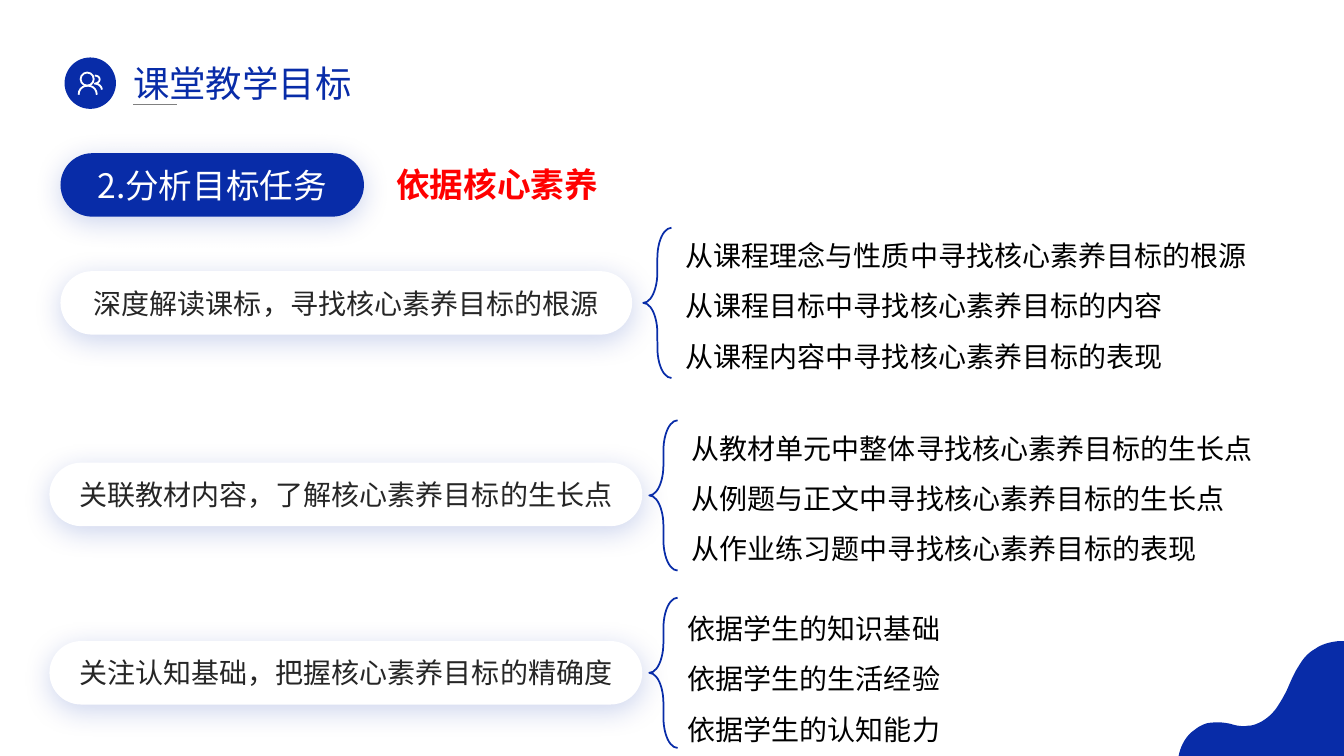
from dataclasses import dataclass

from lxml import etree
from pptx import Presentation
from pptx.dml.color import RGBColor
from pptx.enum.shapes import MSO_CONNECTOR, MSO_SHAPE
from pptx.enum.text import MSO_ANCHOR, MSO_AUTO_SIZE, PP_ALIGN
from pptx.oxml.ns import qn
from pptx.util import Inches, Pt

LEFT, CENTER = PP_ALIGN.LEFT, PP_ALIGN.CENTER
TOP, MIDDLE = MSO_ANCHOR.TOP, MSO_ANCHOR.MIDDLE
GROW = MSO_AUTO_SIZE.SHAPE_TO_FIT_TEXT
FIXED = MSO_AUTO_SIZE.NONE
OVAL, PILL, BRACE = MSO_SHAPE.OVAL, MSO_SHAPE.ROUNDED_RECTANGLE, MSO_SHAPE.LEFT_BRACE
STRAIGHT = MSO_CONNECTOR.STRAIGHT
COMPARISON_LAYOUT = 4


@dataclass(frozen=True)
class Theme:
    font: str = "Noto Sans CJK SC"
    blue: str = "082CA8"
    white: str = "FFFFFF"
    red: str = "FF0000"
    ink: str = "262626"
    black: str = "000000"
    gray: str = "808080"
    title: int = 26
    heading: int = 24
    body: int = 20


THEME = Theme()


def write_text(shape, lines, *, size, color, bold=False, align=LEFT, anchor=TOP,
               spacing=1.0, wrap=True, fit=GROW, side=0.1):
    """Fill a shape with unbulleted paragraphs in one format."""
    frame = shape.text_frame
    frame.word_wrap, frame.auto_size, frame.vertical_anchor = wrap, fit, anchor
    frame.margin_left = frame.margin_right = Inches(side)
    frame.margin_top = frame.margin_bottom = Inches(0.05)
    for index, line in enumerate(lines):
        paragraph = frame.add_paragraph() if index else frame.paragraphs[0]
        paragraph.alignment, paragraph.line_spacing = align, spacing
        paragraph.space_before = Pt(0)
        properties = paragraph._p.get_or_add_pPr()
        properties.set("marL", "0")
        properties.set("indent", "0")
        etree.SubElement(properties, qn("a:buNone"))
        run = paragraph.add_run()
        run.text = line
        run.font.size, run.font.bold = Pt(size), bold
        run.font.color.rgb = RGBColor.from_string(color)
        run.font.name = THEME.font
        etree.SubElement(run._r.get_or_add_rPr(), qn("a:ea"), typeface=THEME.font)


def trace(start, curves, steps=10):
    """Points along a chain of cubic curves, each (x1, y1, x2, y2, x, y)."""
    points = [start]
    for x1, y1, x2, y2, x3, y3 in curves:
        x0, y0 = points[-1]
        for step in range(1, steps + 1):
            t = step / steps
            a, b, c, d = (1 - t) ** 3, 3 * t * (1 - t) ** 2, 3 * t * t * (1 - t), t ** 3
            points.append((a * x0 + b * x1 + c * x2 + d * x3,
                           a * y0 + b * y1 + c * y2 + d * y3))
    return points


class SlideBuilder:
    def __init__(self, slide, theme):
        self.slide, self.theme = slide, theme

    def paint(self, shape, fill=None, line=None, weight=1.0):
        shape.shadow.inherit = False
        if fill:
            shape.fill.solid()
            shape.fill.fore_color.rgb = RGBColor.from_string(fill)
        else:
            shape.fill.background()
        if line:
            shape.line.color.rgb = RGBColor.from_string(line)
            shape.line.width = Pt(weight)
        else:
            shape.line.fill.background()
        return shape

    def shape(self, kind, left, top, width, height, **paint):
        shape = self.slide.shapes.add_shape(
            kind, Inches(left), Inches(top), Inches(width), Inches(height))
        return self.paint(shape, **paint)

    def outline(self, points, close=False, **paint):
        points = [(Inches(x), Inches(y)) for x, y in points]
        builder = self.slide.shapes.build_freeform(*points[0])
        builder.add_line_segments(points[1:], close=close)
        return self.paint(builder.convert_to_shape(), **paint)

    def rule(self, x1, x2, y):
        line = self.slide.shapes.add_connector(
            STRAIGHT, Inches(x1), Inches(y), Inches(x2), Inches(y))
        line.line.color.rgb = RGBColor.from_string(self.theme.gray)
        line.line.width = Pt(0.5)
        etree.SubElement(line._element.spPr, qn("a:effectLst"))

    def pill(self, text, left, top, width, fill, color, size):
        pill = self.shape(PILL, left, top, width, 0.63, fill=fill)
        pill.adjustments[0] = 0.5
        effects = pill._element.spPr.find(qn("a:effectLst"))
        shadow = etree.SubElement(effects, qn("a:outerShdw"), blurRad=str(Pt(20)),
                                  dist=str(Pt(4)), dir="5400000", algn="t", rotWithShape="0")
        tint = etree.SubElement(shadow, qn("a:srgbClr"), val=self.theme.blue)
        etree.SubElement(tint, qn("a:alpha"), val="20000")
        write_text(pill, [text], size=size, color=color, align=CENTER,
                   anchor=MIDDLE, fit=FIXED, side=0.2)

    def brace(self, left, top):
        brace = self.shape(BRACE, left, top, 0.28, 1.49, line=self.theme.blue, weight=1.25)
        brace.adjustments[0] = 1.08

    def placeholder(self, index, lines, left, top, width, height, **text_format):
        holder = self.slide.placeholders[index]
        holder.left, holder.top = Inches(left), Inches(top)
        holder.width, holder.height = Inches(width), Inches(height)
        write_text(holder, lines, **text_format)


def main():
    deck = Presentation()
    deck.slide_width, deck.slide_height = Inches(13.33), Inches(7.5)
    slide = deck.slides.add_slide(deck.slide_layouts[COMPARISON_LAYOUT])
    page = SlideBuilder(slide, THEME)

    # Corner wave
    wave = trace((13.28, 6.36), [
        (13.19, 6.37, 13.11, 6.39, 13.04, 6.44),
        (12.97, 6.48, 12.92, 6.54, 12.88, 6.61),
        (12.84, 6.67, 12.81, 6.74, 12.78, 6.81),
        (12.75, 6.88, 12.71, 6.95, 12.67, 7.01),
        (12.63, 7.07, 12.58, 7.12, 12.51, 7.16),
        (12.47, 7.18, 12.43, 7.2, 12.38, 7.2),
        (12.32, 7.21, 12.26, 7.2, 12.2, 7.18),
        (12.14, 7.17, 12.08, 7.16, 12.02, 7.17),
        (11.96, 7.17, 11.9, 7.2, 11.85, 7.24),
        (11.76, 7.3, 11.71, 7.4, 11.69, 7.5),
    ])
    page.outline(wave + [(13.33, 7.5), (13.33, 6.36)], close=True, fill=THEME.blue)

    # People icon
    stroke = {"line": THEME.white, "weight": 1.3}
    page.shape(OVAL, 0.64, 0.57, 0.51, 0.51, fill=THEME.blue)
    page.outline(trace((0.94, 0.75), [(1.0, 0.75, 1.01, 0.82, 0.94, 0.83),
                                      (0.98, 0.83, 1.01, 0.86, 1.01, 0.89)]), **stroke)
    page.shape(OVAL, 0.8, 0.72, 0.13, 0.13, **stroke)
    page.outline(trace((0.78, 0.94), [(0.78, 0.82, 0.96, 0.82, 0.96, 0.94)]), **stroke)

    # Title and heading
    page.rule(1.32, 1.76, 1.04)
    page.placeholder(0, ["课堂教学目标"], 1.22, 0.56, 2.39, 0.54,
                     size=THEME.title, color=THEME.blue, wrap=False)
    page.pill("2.分析目标任务", 0.6, 1.52, 3.01, THEME.blue, THEME.white, THEME.heading)
    page.placeholder(1, ["依据核心素养"], 3.83, 1.58, 2.22, 0.5,
                     size=THEME.heading, color=THEME.red, bold=True, wrap=False)

    # Tasks: pill box, brace position, list position, list lines
    tasks = [
        ("深度解读课标，寻找核心素养目标的根源", (0.6, 2.69, 5.67), (6.38, 2.26), (6.7, 2.15),
         ["从课程理念与性质中寻找核心素养目标的根源",
          "从课程目标中寻找核心素养目标的内容",
          "从课程内容中寻找核心素养目标的表现"]),
        ("关联教材内容，了解核心素养目标的生长点", (0.49, 4.59, 5.88), (6.44, 4.17), (6.76, 4.06),
         ["从教材单元中整体寻找核心素养目标的生长点",
          "从例题与正文中寻找核心素养目标的生长点",
          "从作业练习题中寻找核心素养目标的表现"]),
        ("关注认知基础，把握核心素养目标的精确度", (0.49, 6.36, 5.88), (6.44, 5.93), (6.72, 5.85),
         ["依据学生的知识基础", "依据学生的生活经验", "依据学生的认知能力"]),
    ]
    for index, (task, pill_box, brace_at, list_at, sources) in enumerate(tasks, start=2):
        page.pill(task, *pill_box, THEME.white, THEME.ink, THEME.body)
        page.brace(*brace_at)
        page.placeholder(index, sources, *list_at, 5.99, 1.56,
                         size=THEME.body, color=THEME.black, spacing=1.5)

    deck.save("out.pptx")


if __name__ == "__main__":
    main()
